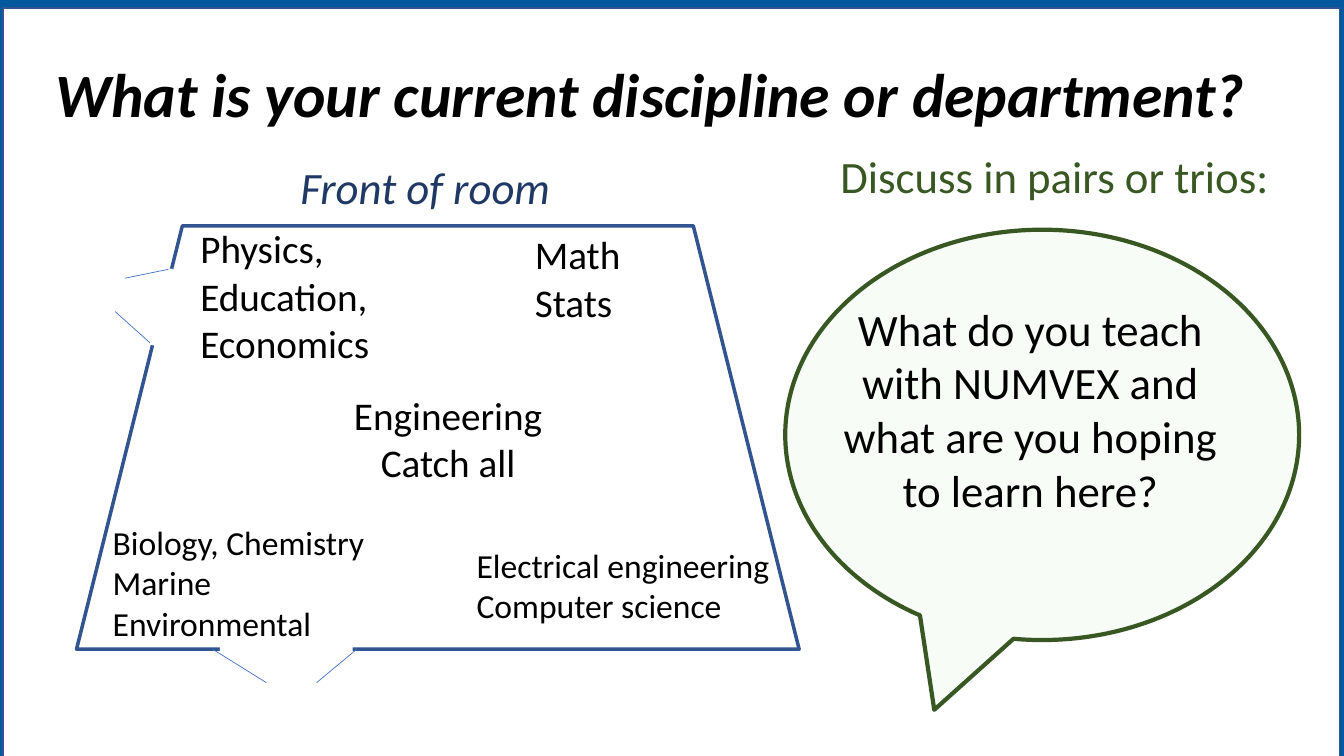
"""Build a slide with a map of disciplines in a room and a prompt for discussion."""
from typing import NamedTuple, Optional

from lxml import etree
from pptx import Presentation
from pptx import util as u
from pptx.dml.color import RGBColor
from pptx.enum import shapes, text
from pptx.oxml import ns

BLUE = RGBColor(0x00, 0x59, 0x9E)
EDGE = RGBColor(0x32, 0x54, 0x91)
DOOR = RGBColor(0x44, 0x72, 0xC4)
NAVY = RGBColor(0x20, 0x38, 0x64)
GREEN = RGBColor(0x38, 0x57, 0x23)
PALE = RGBColor(0xF8, 0xFC, 0xF6)
WHITE = RGBColor(0xFF, 0xFF, 0xFF)
BLACK = RGBColor(0x00, 0x00, 0x00)
FONT = "Calibri"
KIND = shapes.MSO_SHAPE
LEFT, MID = text.PP_ALIGN.LEFT, text.PP_ALIGN.CENTER


class Box(NamedTuple):
    """Place and size in centimetres."""
    left: float
    top: float
    width: float
    height: float


class Form(NamedTuple):
    """A preset shape with its look."""
    kind: KIND
    box: Box
    fill: Optional[RGBColor] = None
    line: Optional[RGBColor] = None
    weight: float = 0
    turn: float = 0
    adjust: tuple = ()


class Label(NamedTuple):
    """A text box with its look."""
    words: str
    box: Box
    size: int
    color: RGBColor = BLACK
    align: text.PP_ALIGN = LEFT
    slant: bool = False


class Leaf(NamedTuple):
    """One open door leaf, from hinge to tip, in centimetres."""
    x1: float
    y1: float
    x2: float
    y2: float


PANEL = Form(KIND.RECTANGLE, Box(0.08, 0.2, 33.68, 19.05), WHITE, EDGE, 1)
ROOM = Form(KIND.TRAPEZOID, Box(1.93, 5.69, 18.21, 10.67), None, EDGE, 2.5)
GAPS = [
    Form(KIND.RECTANGLE, Box(4.01, 6.78, 0.41, 1.98), WHITE, turn=14),
    Form(KIND.RECTANGLE, Box(5.54, 16.15, 3.35, 0.28), WHITE),
]
BUBBLE = Form(KIND.OVAL_CALLOUT, Box(19.79, 5.79, 12.95, 10.34),
              PALE, GREEN, 3, adjust=(-0.21, 0.67))
DOORS = [
    Leaf(5.36, 16.36, 6.71, 17.2),
    Leaf(8.99, 16.36, 7.98, 17.2),
    Leaf(3.86, 8.71, 2.9, 7.85),
    Leaf(4.37, 6.76, 3.15, 7.01),
]
LABELS = [
    Label("Math\nStats", Box(13.23, 5.69, 3.96, 2.64), 28),
    Label("Electrical engineering\nComputer science",
          Box(11.76, 13.61, 8, 3.33), 24),
    Label("Physics,\nEducation,\nEconomics", Box(4.8, 5.54, 5.41, 3.84), 28),
    Label("Biology, Chemistry\nMarine\nEnvironmental",
          Box(2.59, 13.03, 7.49, 3.33), 24),
    Label("Engineering \nCatch all ", Box(8.28, 9.73, 6.25, 2.64), 28, align=MID),
    Label("Front of room", Box(7.32, 3.89, 7.72, 1.63), 32, NAVY, slant=True),
    Label("Discuss in pairs or trios:", Box(20.93, 3.63, 12.19, 1.63), 32, GREEN),
    Label("What do you teach with NUMVEX and what are you hoping to learn here?",
          Box(20.98, 7.47, 9.98, 5.74), 32, align=MID),
]


def style(frame, size: int, color: RGBColor, align, bold=False, slant=False) -> None:
    """Format every run of a text frame."""
    frame.word_wrap = True
    for para in frame.paragraphs:
        para.alignment = align
        for run in para.runs:
            font = run.font
            font.name, font.size = FONT, u.Pt(size)
            font.bold, font.italic = bold, slant
            font.color.rgb = color


def draw_form(slide, form: Form):
    """Draw a preset shape and return it."""
    shape = slide.shapes.add_shape(form.kind, *map(u.Cm, form.box))
    shape.shadow.inherit = False
    shape.rotation = form.turn
    for index, value in enumerate(form.adjust):
        shape.adjustments[index] = value
    if form.fill is None:
        shape.fill.background()
    else:
        shape.fill.solid()
        shape.fill.fore_color.rgb = form.fill
    if form.line is None:
        shape.line.fill.background()
    else:
        shape.line.color.rgb = form.line
        shape.line.width = u.Pt(form.weight)
    return shape


def draw_leaf(slide, leaf: Leaf) -> None:
    """Draw a door leaf as a thin line."""
    line = slide.shapes.add_connector(shapes.MSO_CONNECTOR.STRAIGHT, *map(u.Cm, leaf))
    line.line.color.rgb = DOOR
    line.line.width = u.Pt(0.5)
    etree.SubElement(line._element.spPr, ns.qn("a:effectLst"))


def draw_label(slide, label: Label) -> None:
    """Draw a text box."""
    frame = slide.shapes.add_textbox(*map(u.Cm, label.box)).text_frame
    frame.text = label.words
    style(frame, label.size, label.color, label.align, slant=label.slant)


def draw_title(slide) -> None:
    """Place and format the title."""
    title = slide.shapes.title
    title.left, title.top, title.width, title.height = map(
        u.Cm, Box(1.14, 0.91, 32.33, 3.12))
    frame = title.text_frame
    frame.text = "What is your current discipline or department?"
    frame.vertical_anchor = text.MSO_ANCHOR.MIDDLE
    frame.paragraphs[0].line_spacing = 0.9
    style(frame, 44, BLACK, LEFT, bold=True, slant=True)


def main() -> None:
    """Build and save the slide."""
    deck = Presentation()
    deck.slide_width, deck.slide_height = u.Cm(33.87), u.Cm(19.05)
    slide = deck.slides.add_slide(deck.slide_layouts[5])
    slide.background.fill.solid()
    slide.background.fill.fore_color.rgb = BLUE
    draw_title(slide)
    panel = draw_form(slide, PANEL)
    slide.shapes.title._element.addprevious(panel._element)
    draw_form(slide, ROOM)
    for leaf in DOORS:
        draw_leaf(slide, leaf)
    for form in [*GAPS, BUBBLE]:
        draw_form(slide, form)
    for label in LABELS:
        draw_label(slide, label)
    deck.save("out.pptx")


if __name__ == "__main__":
    main()
